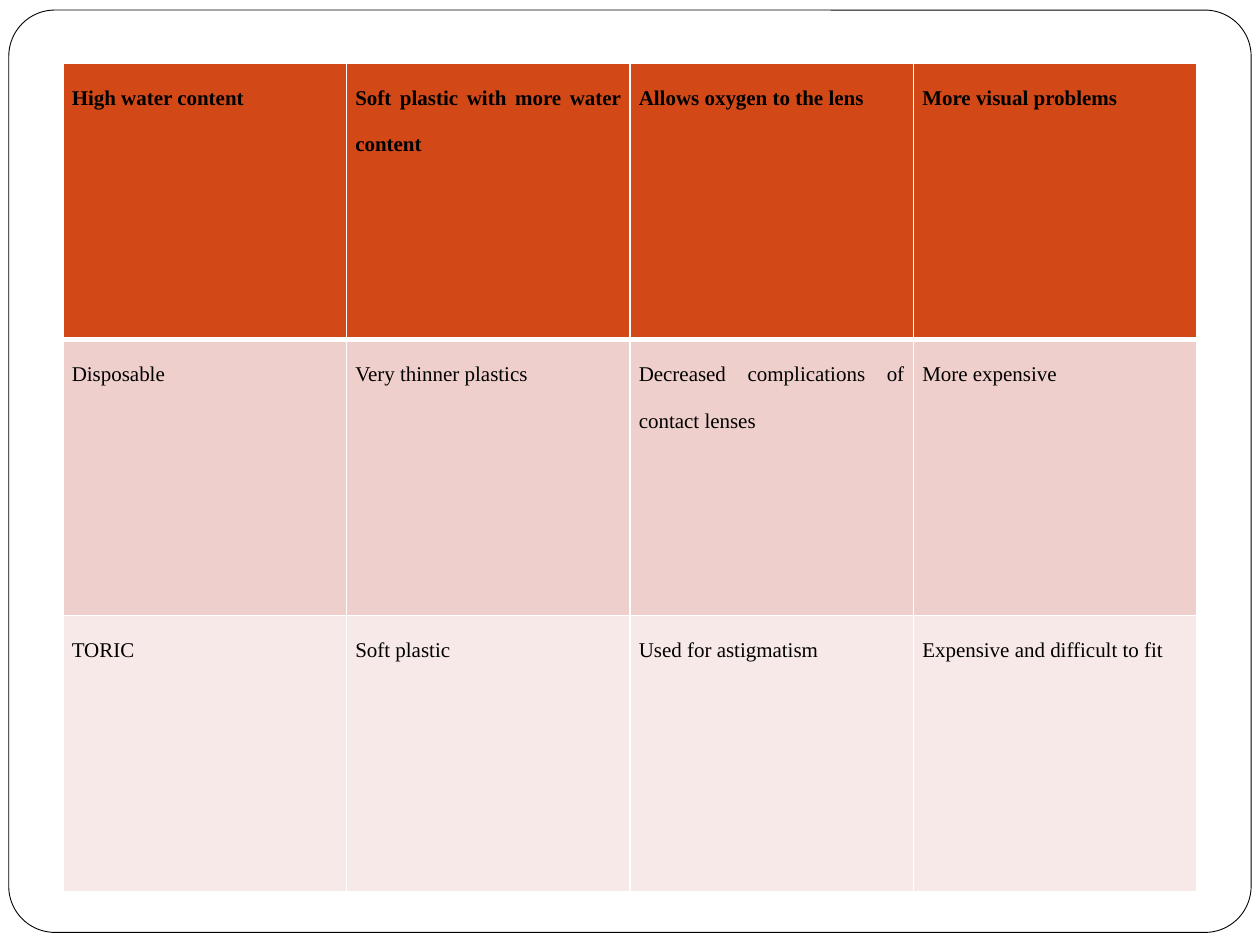
from lxml import etree
from pptx import Presentation
from pptx.dml.color import RGBColor
from pptx.enum.shapes import MSO_SHAPE
from pptx.enum.text import PP_ALIGN
from pptx.oxml.ns import qn
from pptx.util import Inches, Pt

ROUNDED = MSO_SHAPE.ROUNDED_RECTANGLE
JUSTIFY = PP_ALIGN.JUSTIFY
BLANK_LAYOUT = 6
WIDTH, HEIGHT = Inches(10), Inches(7.5)
FONT = "Times New Roman"
COLORS = {
    "white": "FFFFFF",
    "black": "000000",
    "header": "D34817",
    "band": "EFCFCC",
    "light": "F7E9E8",
}
ROW_FILLS = ["header", "band", "light"]
LENS_ROWS = [
    ["High water content", "Soft plastic with more water content ",
     "Allows oxygen to the lens ", "More visual problems"],
    ["Disposable ", "Very thinner plastics ",
     "Decreased complications of contact lenses", "More expensive"],
    ["TORIC", "Soft plastic ", "Used for astigmatism",
     "Expensive and difficult to fit"],
]


def color(name):
    return RGBColor.from_string(COLORS[name])


def write_text(frame, text, size=12, bold=False, space_after=0):
    paragraph = frame.paragraphs[0]
    paragraph.alignment = JUSTIFY
    paragraph.line_spacing = 2.0
    paragraph.space_after = Pt(space_after)
    run = paragraph.add_run()
    run.text = text
    run.font.name = FONT
    run.font.size = Pt(size)
    run.font.bold = bold
    run.font.color.rgb = color("black")


def set_borders(cell, **widths):
    properties = cell._tc.get_or_add_tcPr()
    for index, side in enumerate("LRTB"):
        line = etree.Element(qn(f"a:ln{side}"), w=str(Pt(widths.get(side, 1))))
        fill = etree.SubElement(line, qn("a:solidFill"))
        etree.SubElement(fill, qn("a:srgbClr"), val=COLORS["white"])
        properties.insert(index, line)


def add_frame(slide):
    shape = slide.shapes.add_shape(
        ROUNDED, Inches(0.07), Inches(0.08), Inches(9.86), Inches(7.32))
    shape.adjustments[0] = 0.05
    shape.shadow.inherit = False
    shape.fill.solid()
    shape.fill.fore_color.rgb = color("white")
    shape.line.color.rgb = color("black")
    shape.line.width = Pt(0.5)


def format_cell(cell, text, fill, header, last_column, below_header):
    cell.margin_left = cell.margin_right = Inches(0.07)
    cell.margin_top = cell.margin_bottom = 0
    cell.fill.solid()
    cell.fill.fore_color.rgb = color(fill)
    write_text(cell.text_frame, text, bold=header,
               space_after=10 if last_column else 0)
    set_borders(cell, B=3 if header else 1, T=3 if below_header else 1)


def add_lens_table(slide):
    row_count, column_count = len(LENS_ROWS), len(LENS_ROWS[0])
    margin = Inches(0.5)
    table = slide.shapes.add_table(
        row_count, column_count, margin, margin,
        WIDTH - 2 * margin, Inches(6.58)).table
    for row, texts in enumerate(LENS_ROWS):
        for column, text in enumerate(texts):
            format_cell(table.cell(row, column), text, ROW_FILLS[row],
                        header=row == 0, last_column=column == column_count - 1,
                        below_header=row == 1)


def main():
    presentation = Presentation()
    presentation.slide_width, presentation.slide_height = WIDTH, HEIGHT
    slide = presentation.slides.add_slide(presentation.slide_layouts[BLANK_LAYOUT])
    add_frame(slide)
    add_lens_table(slide)
    presentation.save("out.pptx")


if __name__ == "__main__":
    main()
